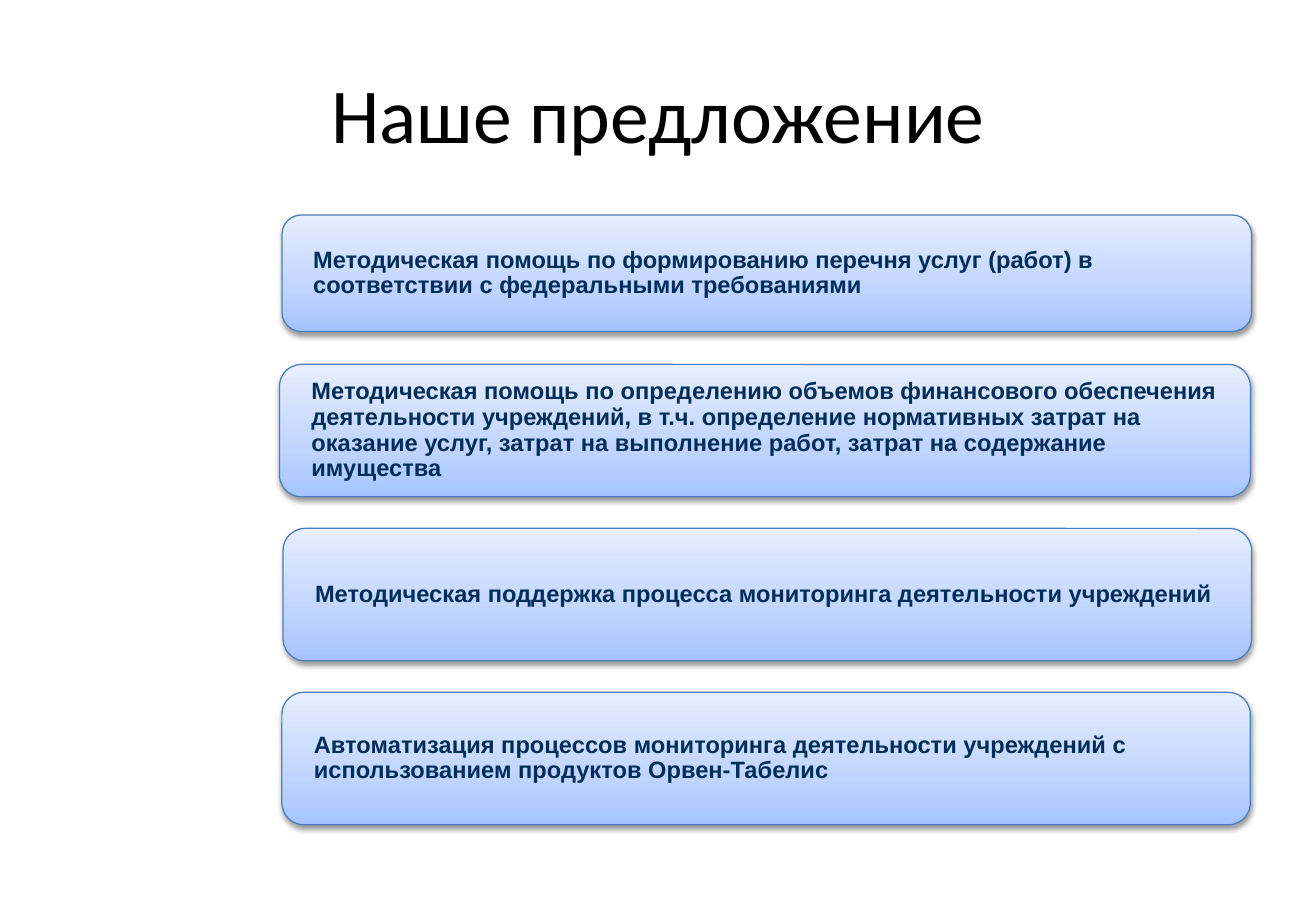
"""Build the slide with four offer cards."""
from dataclasses import dataclass

from lxml.etree import SubElement as Sub
from pptx import Presentation
from pptx.dml.color import RGBColor as Rgb
from pptx.enum.shapes import MSO_SHAPE as Kind
from pptx.enum.text import MSO_ANCHOR as Anchor, PP_ALIGN as Align
from pptx.oxml.ns import qn
from pptx.util import Pt

PX = 9144
HUE = {
    "title": "000000", "text": "002D59", "edge": "4B7EBC", "shade": "000000",
    "low": "A4C4FF", "mid": "BFD4FF", "high": "E6EEFF",
}
STOPS = [(0, "low"), (35, "mid"), (100, "high")]


@dataclass(frozen=True)
class Card:
    left: int
    top: int
    wide: int
    high: int
    text: str


CARDS = [
    Card(232, 177, 798, 96, "Методическая помощь по формированию перечня услуг (работ) "
         "в соответствии с федеральными требованиями"),
    Card(230, 300, 799, 109, "Методическая помощь по определению объемов финансового "
         "обеспечения деятельности учреждений, в т.ч. определение нормативных затрат "
         "на оказание услуг, затрат на выполнение работ, затрат на содержание имущества"),
    Card(233, 435, 797, 109, "Методическая поддержка процесса мониторинга "
         "деятельности учреждений"),
    Card(232, 570, 797, 109, "Автоматизация процессов мониторинга деятельности "
         "учреждений с использованием продуктов Орвен-Табелис"),
]


def write(shape, text: str, *, size: int, face: str, hue: str, bold: bool = False,
          align=Align.LEFT, side: int = 10, edge: int = 5, space: float = 1.0) -> None:
    frame = shape.text_frame
    frame.word_wrap = True
    frame.vertical_anchor = Anchor.MIDDLE
    frame.margin_left = frame.margin_right = side * PX
    frame.margin_top = frame.margin_bottom = edge * PX
    para = frame.paragraphs[0]
    para.alignment = align
    para.line_spacing = space
    run = para.add_run()
    run.text = text
    font = run.font
    font.size, font.name, font.bold = Pt(size), face, bold
    font.color.rgb = Rgb.from_string(HUE[hue])


def tint(shape) -> None:
    shape.fill.gradient()
    shape.fill.gradient_angle = 90
    stops = shape.fill._fill._gradFill.find(qn("a:gsLst"))
    stops.clear()
    for pos, hue in STOPS:
        stop = Sub(stops, qn("a:gs"), pos=str(pos * 1000))
        Sub(stop, qn("a:srgbClr"), val=HUE[hue])


def shade(shape) -> None:
    shape.shadow.inherit = False
    host = shape._element.spPr.find(qn("a:effectLst"))
    drop = Sub(host, qn("a:outerShdw"), blurRad="40000", dist="20000",
               dir="5400000", rotWithShape="0")
    tone = Sub(drop, qn("a:srgbClr"), val=HUE["shade"])
    Sub(tone, qn("a:alpha"), val="38000")


def draw(slide, card: Card) -> None:
    box = (card.left, card.top, card.wide, card.high)
    shape = slide.shapes.add_shape(Kind.ROUNDED_RECTANGLE, *(n * PX for n in box))
    tint(shape)
    shade(shape)
    shape.line.color.rgb = Rgb.from_string(HUE["edge"])
    shape.line.width = Pt(0.75)
    write(shape, card.text, size=14, face="Arial", hue="text", bold=True,
          side=21, edge=0, space=0.9)


def main() -> None:
    deck = Presentation()
    deck.slide_width, deck.slide_height = 1083 * PX, 750 * PX
    slide = deck.slides.add_slide(deck.slide_layouts[6])
    title = slide.shapes.add_textbox(54 * PX, 30 * PX, 975 * PX, 125 * PX)
    write(title, "Наше предложение", size=46, face="Calibri", hue="title",
          align=Align.CENTER)
    for card in CARDS:
        draw(slide, card)
    deck.save("out.pptx")


if __name__ == "__main__":
    main()
